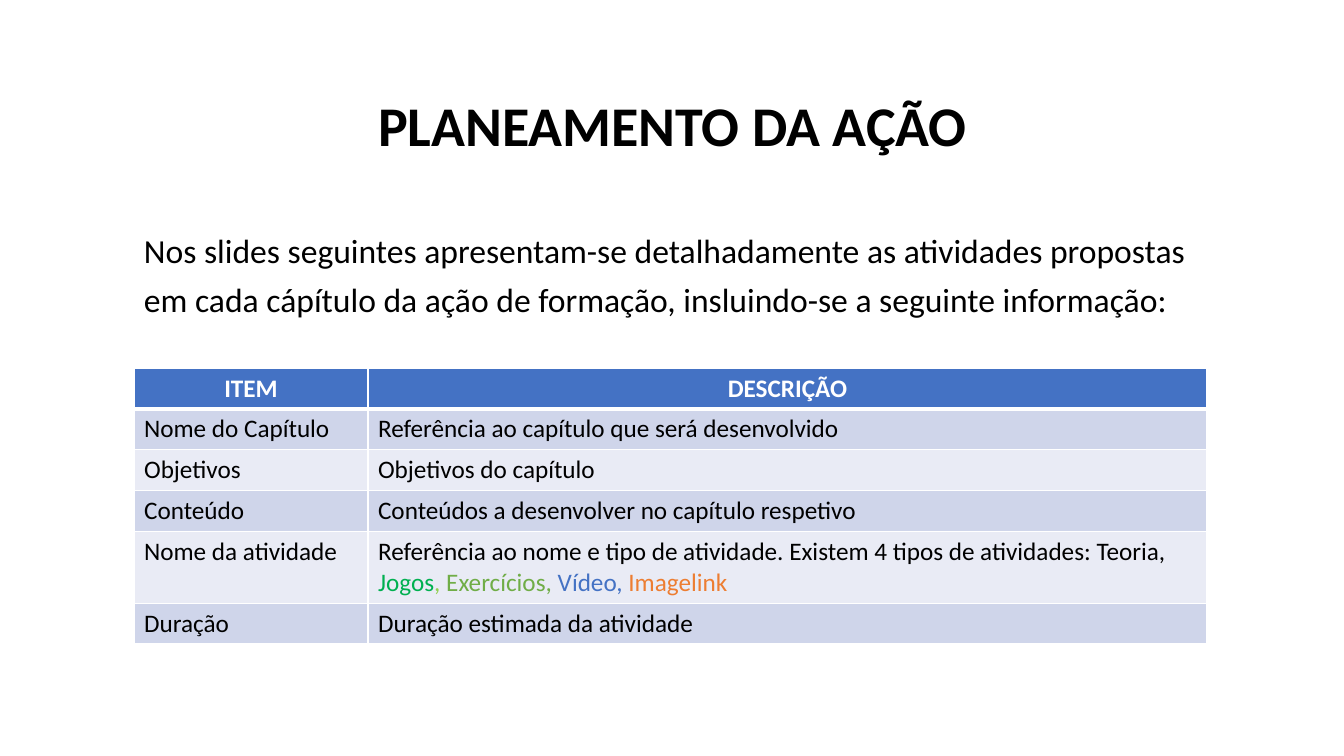
import pptx
import pptx.dml.color
import pptx.enum.text
import pptx.oxml
import pptx.oxml.ns
import pptx.util

PX = 914400 / 100.8
BLACK, WHITE, BLUE = "000000", "FFFFFF", "4472C4"
BANDS = ("CFD5EA", "E9EBF5")
CENTER = pptx.enum.text.PP_ALIGN.CENTER
LEFT = pptx.enum.text.PP_ALIGN.LEFT


def rgb(value):
    return pptx.dml.color.RGBColor.from_string(value)


def px(*values):
    return [pptx.util.Emu(round(v * PX)) for v in values]


class Deck:
    """Holds the font and the current slide, and draws its elements."""

    def __init__(self, font, width, height):
        self.font = font
        self.prs = pptx.Presentation()
        self.prs.slide_width, self.prs.slide_height = px(width, height)
        self.s = self.prs.slides.add_slide(self.prs.slide_layouts[6])

    def paragraph(self, p, runs, size, color=BLACK, bold=False, align=LEFT):
        p.alignment = align
        p.font.name = self.font
        p.font.size = pptx.util.Pt(size)
        p.font.bold = bold
        if isinstance(runs, str):
            p.font.color.rgb = rgb(color)
            runs = [(runs, color)]
        for text, run_color in runs:
            r = p.add_run()
            r.text = text
            r.font.color.rgb = rgb(run_color)

    def text(self, box, text, size, spacing=None, **style):
        tf = self.s.shapes.add_textbox(*px(*box)).text_frame
        tf.word_wrap = True
        p = tf.paragraphs[0]
        p.line_spacing = spacing
        self.paragraph(p, text, size, **style)

    def bottom_border(self, cell, color, points):
        line = pptx.oxml.parse_xml(
            f'<a:lnB {pptx.oxml.ns.nsdecls("a")} w="{pptx.util.Pt(points)}">'
            f'<a:solidFill><a:srgbClr val="{color}"/></a:solidFill></a:lnB>')
        cell._tc.get_or_add_tcPr().insert(0, line)

    def table(self, left, top, widths, heights, rows, size):
        box = px(left, top, sum(widths), sum(heights))
        table = self.s.shapes.add_table(len(rows), len(widths), *box).table
        for column, width in zip(table.columns, px(*widths)):
            column.width = width
        for row, height in zip(table.rows, px(*heights)):
            row.height = height
        for i, row in enumerate(rows):
            for j, content in enumerate(row):
                cell = table.cell(i, j)
                cell.fill.solid()
                p = cell.text_frame.paragraphs[0]
                if i == 0:
                    cell.fill.fore_color.rgb = rgb(BLUE)
                    self.bottom_border(cell, WHITE, 3)
                    self.paragraph(p, content, size, WHITE, True, CENTER)
                else:
                    cell.fill.fore_color.rgb = rgb(BANDS[(i - 1) % 2])
                    self.paragraph(p, content, size)


ACTIVITY_TYPES = [
    ("Referência ao nome e tipo de atividade. Existem 4 tipos de atividades: Teoria, ", BLACK),
    ("Jogos", "00B050"),
    (", ", "92D050"),
    ("Exercícios, ", "70AD47"),
    ("Vídeo, ", BLUE),
    ("Imagelink", "ED7D31"),
]
ROWS = [
    ("ITEM", "DESCRIÇÃO"),
    ("Nome do Capítulo", "Referência ao capítulo que será desenvolvido"),
    ("Objetivos", "Objetivos do capítulo"),
    ("Conteúdo", "Conteúdos a desenvolver no capítulo respetivo"),
    ("Nome da atividade", ACTIVITY_TYPES),
    ("Duração", "Duração estimada da atividade"),
]


def main():
    deck = Deck("Calibri", 1344, 756)
    deck.table(134, 368, (234, 839), (40, 40, 40, 40, 70, 40), ROWS, 18)
    deck.text((253, 86, 839, 78), "PLANEAMENTO DA AÇÃO", 40, bold=True, align=CENTER)
    deck.text((134, 217, 1073, 118),
              "Nos slides seguintes apresentam-se detalhadamente as atividades propostas "
              "em cada cápítulo da ação de formação, insluindo-se a seguinte informação:",
              24, spacing=1.2)
    deck.prs.save("out.pptx")


if __name__ == "__main__":
    main()
